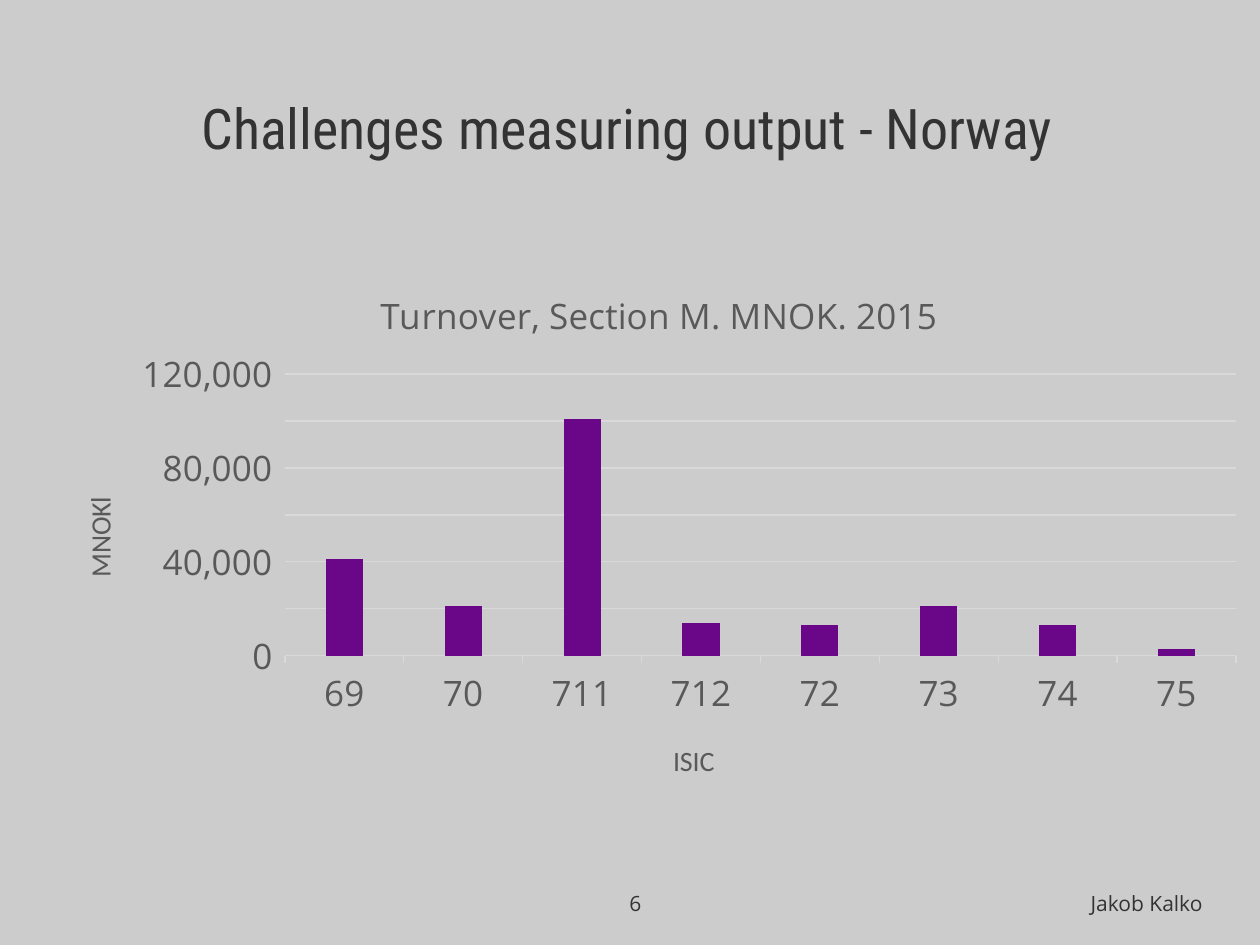
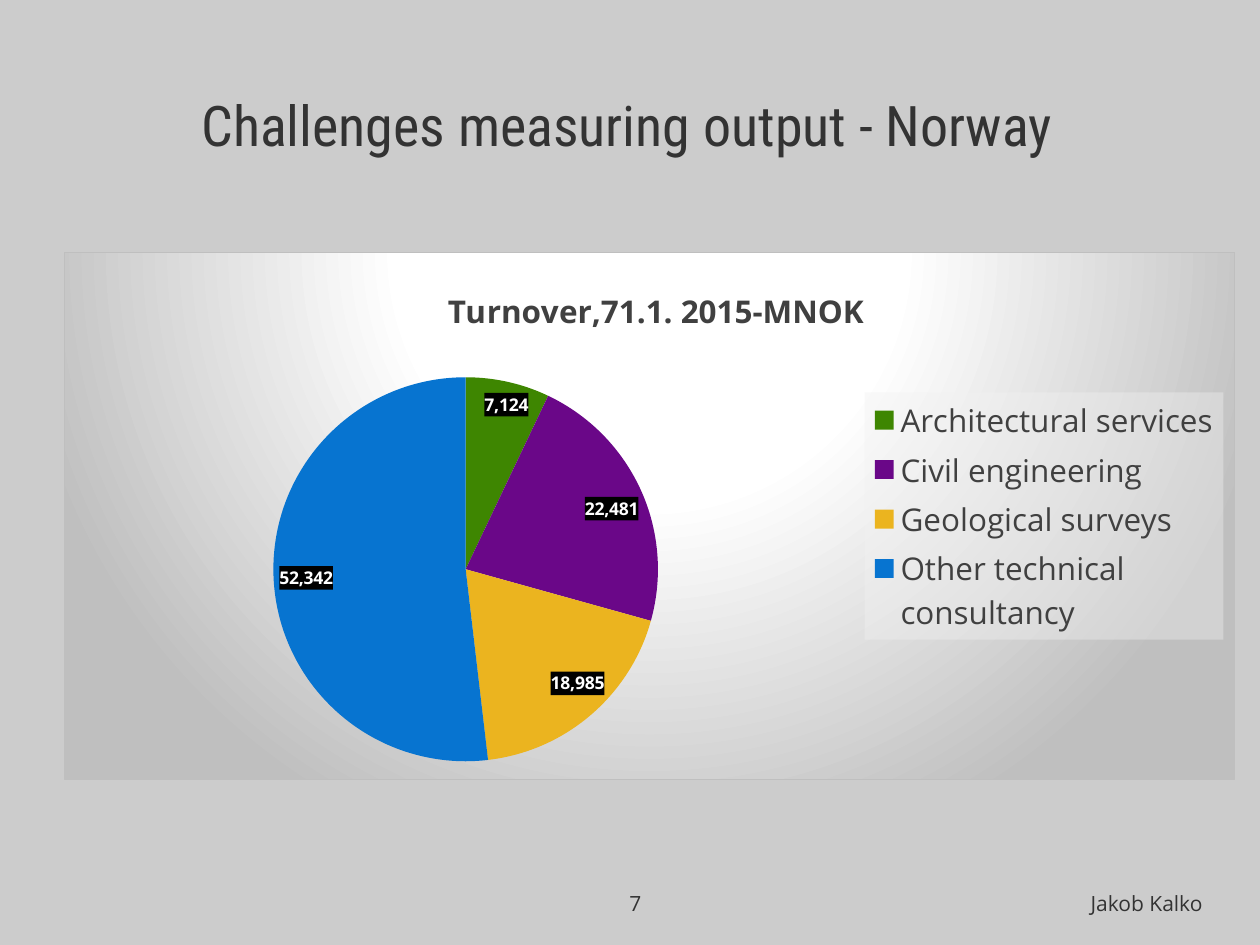
from lxml import etree
from pptx import Presentation
from pptx.chart.data import CategoryChartData
from pptx.dml.color import RGBColor
from pptx.enum.chart import XL_CHART_TYPE, XL_LABEL_POSITION, XL_LEGEND_POSITION, XL_TICK_MARK
from pptx.enum.text import MSO_ANCHOR, PP_ALIGN
from pptx.oxml import parse_xml
from pptx.oxml.ns import nsdecls, qn
from pptx.util import Pt

COLUMN, PIE = XL_CHART_TYPE.COLUMN_CLUSTERED, XL_CHART_TYPE.PIE
BEST_FIT, LEGEND_RIGHT = XL_LABEL_POSITION.BEST_FIT, XL_LEGEND_POSITION.RIGHT
TICK_OUT = XL_TICK_MARK.OUTSIDE
LEFT, CENTER, RIGHT = PP_ALIGN.LEFT, PP_ALIGN.CENTER, PP_ALIGN.RIGHT
MIDDLE = MSO_ANCHOR.MIDDLE

PX_PER_INCH = 126
BACKGROUND, INK, AXIS_INK, CHART_INK, GRID = "CCCCCC", "333333", "595959", "404040", "D9D9D9"
GREEN, PURPLE, YELLOW, BLUE = "3E8601", "6A0788", "EBB41F", "0774D0"
TITLE_FONT, BODY_FONT, AXIS_TITLE_FONT = "Roboto Condensed", "Open Sans", "Calibri"
TITLE = "Challenges measuring output - Norway"
AUTHOR = "Jakob Kalko"
NUMBER_FORMAT = "#,##0"

NO_FILL = "<a:noFill/>"
NO_LINE = "<a:ln><a:noFill/></a:ln>"
GREY_LINE = '<a:ln w="9525"><a:solidFill><a:srgbClr val="BFBFBF"/></a:solidFill></a:ln>'
SPOTLIGHT = (
    '<a:gradFill><a:gsLst><a:gs pos="0"><a:srgbClr val="FFFFFF"/></a:gs>'
    '<a:gs pos="39000"><a:srgbClr val="FFFFFF"/></a:gs>'
    '<a:gs pos="100000"><a:srgbClr val="BFBFBF"/></a:gs></a:gsLst>'
    '<a:path path="circle"><a:fillToRect l="50000" t="-80000" r="50000" b="180000"/></a:path>'
    "</a:gradFill>"
)


def px(length):
    return round(length * 914400 / PX_PER_INCH)


def color(hex_string):
    return RGBColor.from_string(hex_string)


def sheer(hex_string, alpha):
    return (f'<a:solidFill><a:srgbClr val="{hex_string}">'
            f'<a:alpha val="{alpha * 1000}"/></a:srgbClr></a:solidFill>')


def shape_properties(fill, line=NO_LINE):
    return parse_xml(f'<c:spPr {nsdecls("c", "a")}>{fill}{line}</c:spPr>')


def set_font(font, size, hex_string, name=BODY_FONT, bold=False):
    font.size, font.name, font.bold = Pt(size), name, bold
    font.color.rgb = color(hex_string)


class Deck:
    """Holds the shared style and the current slide."""

    def __init__(self):
        self.presentation = Presentation()
        self.presentation.slide_width = px(1260)
        self.presentation.slide_height = px(945)
        self.slide = None

    def add_slide(self, number, title_top):
        self.slide = self.presentation.slides.add_slide(self.presentation.slide_layouts[6])
        fill = self.slide.background.fill
        fill.solid()
        fill.fore_color.rgb = color(BACKGROUND)
        self.add_text(TITLE, (189, title_top, 1012, 186), 32, LEFT, TITLE_FONT)
        self.add_text(AUTHOR, (769, 879, 446, 49), 12, RIGHT)
        self.add_text(str(number), (561, 879, 149, 49), 12, CENTER)

    def add_text(self, text, box, size, alignment, font_name=BODY_FONT):
        frame = self.slide.shapes.add_textbox(*map(px, box)).text_frame
        frame.word_wrap = True
        frame.vertical_anchor = MIDDLE
        paragraph = frame.paragraphs[0]
        paragraph.text = text
        paragraph.alignment = alignment
        set_font(paragraph.font, size, INK, font_name)

    def place(self, element, chart_box, left, top, width=None, height=None):
        """Fix a chart part at slide pixels, as fractions of its chart."""
        chart_left, chart_top, chart_width, chart_height = chart_box
        fractions = {"x": (left - chart_left) / chart_width, "y": (top - chart_top) / chart_height}
        if width:
            fractions.update(w=width / chart_width, h=height / chart_height)
        for previous in element.findall(qn("c:layout")):
            element.remove(previous)
        layout = parse_xml(f'<c:layout {nsdecls("c")}><c:manualLayout/></c:layout>')
        settings = [(f"{key}Mode", "edge") for key in "xy"]
        settings += [(key, f"{value:.4f}") for key, value in fractions.items()]
        if element.tag == qn("c:plotArea"):
            settings.insert(0, ("layoutTarget", "inner"))
        for tag, value in settings:
            etree.SubElement(layout[0], qn(f"c:{tag}")).set("val", value)
        overlay = element.find(qn("c:overlay"))
        if overlay is None:
            element.insert(0, layout)
        else:
            overlay.addprevious(layout)

    def add_chart(self, kind, box, plot_box, values, fill, line=NO_LINE):
        data = CategoryChartData(number_format=NUMBER_FORMAT)
        data.categories = list(values)
        data.add_series("Series 1", list(values.values()))
        chart = self.slide.shapes.add_chart(kind, *map(px, box), data).chart
        set_font(chart.font, 10, "000000")
        chart.has_legend = False
        chart_element = chart.element.find(qn("c:chart"))
        chart_element.addnext(shape_properties(fill, line))
        self.place(chart_element.find(qn("c:plotArea")), box, *plot_box)
        return chart

    def add_chart_title(self, title, text, box, position, size, hex_string,
                        font_name=BODY_FONT, bold=False):
        paragraph = title.text_frame.paragraphs[0]
        paragraph.text = text
        set_font(paragraph.font, size, hex_string, font_name, bold)
        self.place(title.element, box, *position)

    def style_axis(self, axis, title, box, position):
        axis.major_tick_mark = TICK_OUT
        set_font(axis.tick_labels.font, 20, AXIS_INK)
        self.add_chart_title(axis.axis_title, title, box, position, 16, AXIS_INK, AXIS_TITLE_FONT)

    def grey_line(self, line):
        line.color.rgb = color(GRID)
        line.width = Pt(0.75)

    def add_column_chart(self, box, plot_box, values):
        chart = self.add_chart(COLUMN, box, plot_box, values, NO_FILL)
        self.add_chart_title(chart.chart_title, "Turnover, Section M. MNOK. 2015",
                             box, (374, 281), 20, AXIS_INK)
        plot = chart.plots[0]
        plot.gap_width, plot.overlap, plot.vary_by_categories = 219, -27, False
        bars = plot.series[0].format.fill
        bars.solid()
        bars.fore_color.rgb = color(PURPLE)
        self.style_axis(chart.category_axis, "ISIC", box, (668, 737))
        self.grey_line(chart.category_axis.format.line)
        value_axis = chart.value_axis
        self.style_axis(value_axis, "MNOKl", box, (76, 492))
        body = value_axis.axis_title.text_frame._txBody.find(qn("a:bodyPr"))
        body.set("rot", "-5400000")
        body.set("vert", "horz")
        value_axis.minimum_scale, value_axis.maximum_scale = 0, 120000
        value_axis.major_unit = 20000
        value_axis.tick_labels.number_format = NUMBER_FORMAT
        value_axis.tick_labels.number_format_is_linked = False
        value_axis.format.line.fill.background()
        self.grey_line(value_axis.major_gridlines.format.line)

    def add_pie_chart(self, box, plot_box, legend_box, values, slice_colors):
        chart = self.add_chart(PIE, box, plot_box, values, SPOTLIGHT, GREY_LINE)
        self.add_chart_title(chart.chart_title, "Turnover,71.1. 2015-MNOK",
                             box, (442, 279), 18, CHART_INK, bold=True)
        plot = chart.plots[0]
        plot.vary_by_categories = True
        series = plot.series[0]
        for index, slice_color in enumerate(slice_colors):
            fill = series.points[index].format.fill
            fill.solid()
            fill.fore_color.rgb = color(slice_color)
        labels = series.data_labels
        labels.show_value = True
        labels.position = BEST_FIT
        labels.number_format = NUMBER_FORMAT
        labels.number_format_is_linked = False
        set_font(labels.font, 10, "FFFFFF", bold=True)
        label_format = labels._element.find(qn("c:numFmt"))
        label_format.addnext(shape_properties(sheer("000000", 75)))
        chart.has_legend = True
        legend = chart.legend
        legend.position = LEGEND_RIGHT
        legend.include_in_layout = False
        set_font(legend.font, 18, CHART_INK)
        self.place(legend._element, box, *legend_box)
        overlay = legend._element.find(qn("c:overlay"))
        overlay.addnext(shape_properties(sheer("F2F2F2", 39)))


def main():
    deck = Deck()
    deck.add_slide(6, 34)
    deck.add_column_chart(
        (44, 252, 1216, 548), (285, 374, 951, 282),
        {"69": 41000, "70": 21000, "711": 101000, "712": 14000,
         "72": 13000, "73": 21000, "74": 13000, "75": 3000})
    deck.add_slide(7, 31)
    deck.add_pie_chart(
        (64, 252, 1171, 528), (273, 377, 385, 385), (865, 392, 359, 248),
        {"Architectural services": 7124, "Civil engineering": 22481,
         "Geological surveys": 18985, "Other technical consultancy": 52342},
        (GREEN, PURPLE, YELLOW, BLUE))
    deck.presentation.save("out.pptx")


if __name__ == "__main__":
    main()
